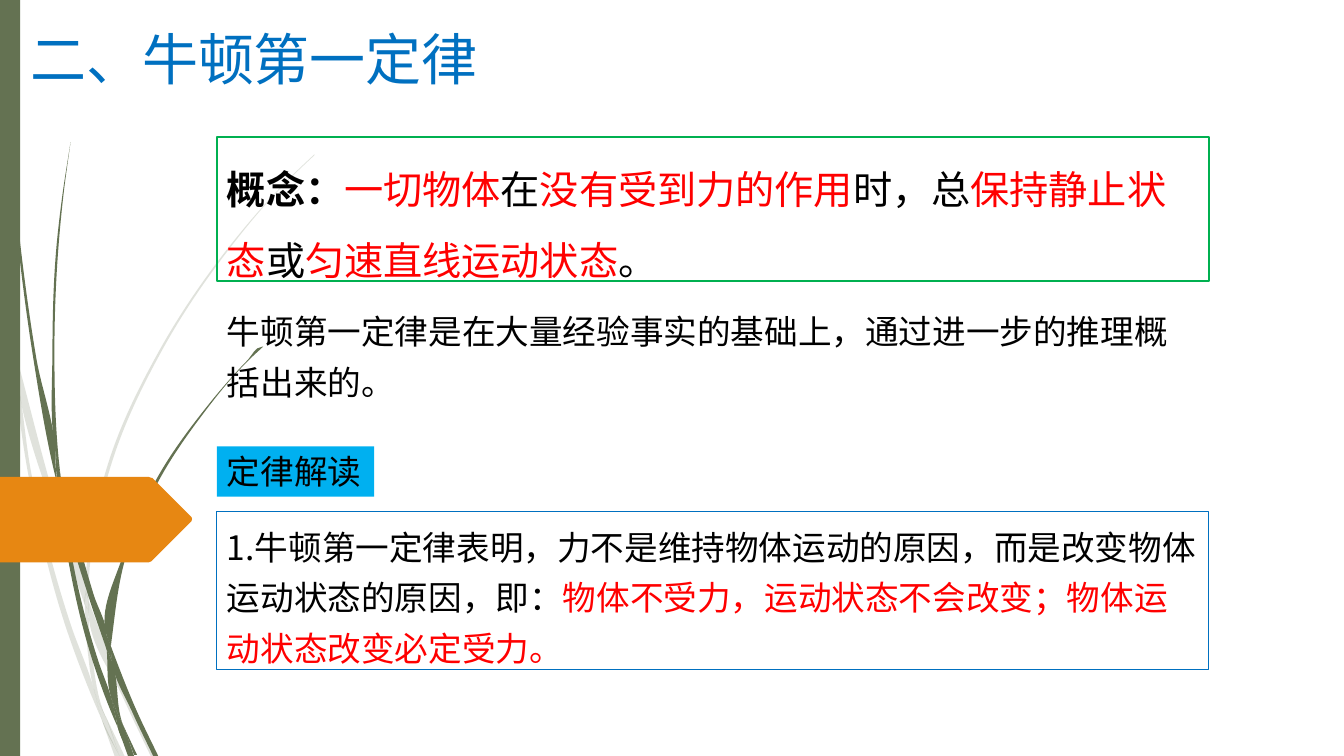
from lxml import etree
from pptx import Presentation
from pptx.dml.color import RGBColor
from pptx.enum.shapes import MSO_SHAPE
from pptx.enum.text import MSO_ANCHOR, MSO_AUTO_SIZE, PP_ALIGN
from pptx.oxml.ns import qn
from pptx.util import Pt

RECTANGLE = MSO_SHAPE.RECTANGLE
TOP = MSO_ANCHOR.TOP
LEFT = PP_ALIGN.LEFT
NO_AUTOFIT = MSO_AUTO_SIZE.NONE

FONT = "Noto Sans CJK SC"
BLACK = RGBColor(0x00, 0x00, 0x00)
RED = RGBColor(0xFF, 0x00, 0x00)
BLUE = RGBColor(0x00, 0x70, 0xC0)
SKY = RGBColor(0x00, 0xB0, 0xF0)
GREEN = RGBColor(0x00, 0xB0, 0x50)
MOSS = RGBColor(0x64, 0x72, 0x52)
ORANGE = RGBColor(0xE7, 0x87, 0x12)

PAGE_WIDTH, PAGE_HEIGHT = 960, 540
BODY_LEFT, BODY_WIDTH = 155, 708.5
LINE_FACTOR = 1.21
GRID = 0.72
SHARP_TURN = 0.7

PALE_BLADES = [
    [(11, 350), (9, 322), (0, 282), (0, 299), (10, 344)],
    [(58, 522), (84, 600), (85, 587), (62, 520), (14, 345), (17, 376)],
    [(92, 607), (88, 596), (88, 610), (123, 694), (150, 751), (155, 751), (127, 692)],
    [(119, 751), (124, 751), (105, 711)],
    [(93, 683), (70, 619), (31, 469), (17, 376), (11, 350), (28, 470), (65, 621), (92, 693),
     (101, 714), (99, 707)],
    [(84, 599), (87, 646), (93, 683), (96, 692), (105, 712), (103, 707), (91, 646), (88, 610), (88, 608)],
    [(88, 584), (110, 462), (160, 349), (229, 245), (268, 198), (290, 175), (312, 154), (312, 153),
     (289, 175), (268, 197), (228, 244), (158, 348), (107, 461), (85, 584), (85, 586), (88, 596)],
    [(101, 714), (114, 751), (119, 751)],
    [(88, 608), (88, 610), (88, 596), (85, 586), (84, 599)],
    [(96, 692), (93, 683), (99, 707), (101, 714), (119, 751), (105, 711)],
]
DARK_BLADES = [
    [(7, 110), (17, 233), (33, 355), (56, 477), (57, 481), (55, 457), (55, 453), (36, 355), (19, 232),
     (8, 109), (5, 48), (4, 0), (3, 0), (4, 48)],
    [(88, 592), (106, 645), (106, 633), (106, 631), (93, 590), (60, 472), (64, 505)],
    [(113, 649), (110, 641), (111, 656), (132, 708), (152, 750), (157, 750), (136, 706)],
    [(110, 691), (98, 657), (72, 556), (64, 505), (57, 477), (68, 557), (93, 659), (111, 708),
     (117, 722), (116, 717)],
    [(60, 472), (58, 453), (54, 349), (58, 245), (63, 193), (70, 141), (62, 193), (56, 245),
     (52, 349), (55, 449)],
    [(133, 749), (136, 749), (122, 719)],
    [(57, 477), (64, 505), (60, 472), (55, 449), (55, 453)],
    [(111, 633), (125, 552), (158, 476), (205, 406), (231, 374), (245, 359), (261, 344), (260, 344),
     (245, 358), (231, 373), (204, 405), (156, 474), (122, 551), (106, 631), (110, 641)],
    [(117, 722), (127, 750), (131, 750)],
    [(106, 645), (110, 691), (116, 706), (122, 719), (121, 716), (111, 656), (109, 651)],
    [(106, 645), (109, 651), (111, 656), (110, 641), (106, 631), (106, 633)],
    [(116, 706), (110, 691), (116, 717), (117, 722), (130, 750), (133, 750), (122, 719)],
]
MARKER = [(147, 558), (150, 557), (151, 556), (190, 517), (190.5, 515), (190, 513), (151, 474),
          (150, 474), (147, 473), (0, 473), (0, 558)]


def paint(shape, color):
    """Give a shape a plain fill without outline or shadow."""
    shape.shadow.inherit = False
    shape.fill.solid()
    shape.fill.fore_color.rgb = color
    shape.line.fill.background()


def add_outline(page, corners, color):
    """Draw a filled closed outline from grid points."""
    points = [(Pt(x * GRID), Pt(y * GRID)) for x, y in corners]
    builder = page.shapes.build_freeform(*points[0])
    builder.add_line_segments(points[1:] + points[:1], close=False)
    shape = builder.convert_to_shape()
    paint(shape, color)
    return shape


def bend(shape):
    """Turn the straight sides of an outline into curves, keeping its sharp tips."""
    sides = list(shape._element.iter(qn("a:lnTo")))
    ends = [complex(int(side[0].get("x")), int(side[0].get("y"))) for side in sides]
    chords = [end - ends[index - 1] for index, end in enumerate(ends)]
    directions = []
    for index, before in enumerate(chords):
        after = chords[(index + 1) % len(chords)]
        before_unit, after_unit = before / abs(before), after / abs(after)
        if (before_unit * after_unit.conjugate()).real < SHARP_TURN:
            directions.append((before_unit, after_unit))
        else:
            blend = before_unit * abs(after) + after_unit * abs(before)
            directions.append((blend / abs(blend),) * 2)
    for index, side in enumerate(sides):
        reach = abs(chords[index]) / 3
        first = ends[index - 1] + directions[index - 1][1] * reach
        second = ends[index] - directions[index][0] * reach
        side.tag = qn("a:cubicBezTo")
        for place, control in enumerate((first, second)):
            point = etree.Element(qn("a:pt"), x=str(round(control.real)), y=str(round(control.imag)))
            side.insert(place, point)


def add_decoration(page):
    """Draw the grass, the side bar and the orange marker."""
    for corners in PALE_BLADES:
        blade = add_outline(page, corners, MOSS)
        bend(blade)
        color = next(blade._element.iter(qn("a:srgbClr")))
        etree.SubElement(color, qn("a:alpha")).set("val", "20000")
    for corners in DARK_BLADES:
        bend(add_outline(page, corners, MOSS))
    bar = page.shapes.add_shape(RECTANGLE, 0, 0, Pt(14.4), Pt(PAGE_HEIGHT))
    paint(bar, MOSS)
    add_outline(page, MARKER, ORANGE)


def write(box, runs, size, spacing=1):
    """Fill a box with one paragraph of (text, color, bold) runs."""
    frame = box.text_frame
    frame.word_wrap = True
    frame.auto_size = NO_AUTOFIT
    frame.vertical_anchor = TOP
    frame.margin_left = frame.margin_right = Pt(7.2)
    frame.margin_top = Pt(3.6 - 0.02 * size)
    frame.margin_bottom = 0
    para = frame.paragraphs[0]
    para.alignment = LEFT
    para.space_before = para.space_after = Pt(0)
    para.line_spacing = Pt(round(size * spacing * LINE_FACTOR, 1))
    for text, color, bold in runs:
        span = para.add_run()
        span.text = text
        span.font.name = FONT
        span.font.size = Pt(size)
        span.font.bold = bold
        span.font.color.rgb = color
        etree.SubElement(span.font._element, qn("a:ea")).set("typeface", FONT)


def add_title(page, left, top, width, height):
    """Place the section heading in the title placeholder."""
    title = page.shapes.title
    title.left, title.top, title.width, title.height = map(Pt, (left, top, width, height))
    write(title, [("二、牛顿第一定律", BLUE, False)], 40)


def add_panel(page, top, width, height, fill=None, line=None, weight=0):
    """Place a rectangle in the body column with a fill or an outline."""
    panel = page.shapes.add_shape(RECTANGLE, Pt(BODY_LEFT), Pt(top), Pt(width), Pt(height))
    panel.shadow.inherit = False
    if fill:
        paint(panel, fill)
    else:
        panel.fill.background()
        panel.line.color.rgb = line
        panel.line.width = Pt(weight)
    return panel


def add_body(page):
    """Place the reading, the concept, its background and the label."""
    reading = add_panel(page, 365.5, BODY_WIDTH, 113, line=BLUE, weight=0.75)
    write(reading, [
        ("1.牛顿第一定律表明，力不是维持物体运动的原因，而是改变物体运动状态的原因，即：", BLACK, False),
        ("物体不受力，运动状态不会改变；物体运动状态改变必定受力。", RED, False),
    ], 24, 1.25)
    concept = add_panel(page, 97.9, BODY_WIDTH, 103, line=GREEN, weight=1.5)
    write(concept, [
        ("概念：", BLACK, True),
        ("一切物体", RED, False),
        ("在", BLACK, False),
        ("没有受到力的作用", RED, False),
        ("时，总", BLACK, False),
        ("保持静止状态", RED, False),
        ("或", BLACK, False),
        ("匀速直线运动状态", RED, False),
        ("。", BLACK, False),
    ], 28, 1.5)
    background = page.shapes.add_textbox(Pt(BODY_LEFT), Pt(211.7), Pt(BODY_WIDTH), Pt(76.3))
    write(background, [
        ("牛顿第一定律是在大量经验事实的基础上，通过进一步的推理概括出来的。", BLACK, False),
    ], 24, 1.25)
    label = add_panel(page, 318.8, 112.3, 36, fill=SKY)
    write(label, [("定律解读", BLACK, False)], 24)


def main():
    """Build the deck and save it."""
    deck = Presentation()
    deck.slide_width, deck.slide_height = Pt(PAGE_WIDTH), Pt(PAGE_HEIGHT)
    page = deck.slides.add_slide(deck.slide_layouts[5])
    add_decoration(page)
    add_title(page, 14.4, 14.4, 349.2, 55.4)
    add_body(page)
    deck.save("out.pptx")


if __name__ == "__main__":
    main()
